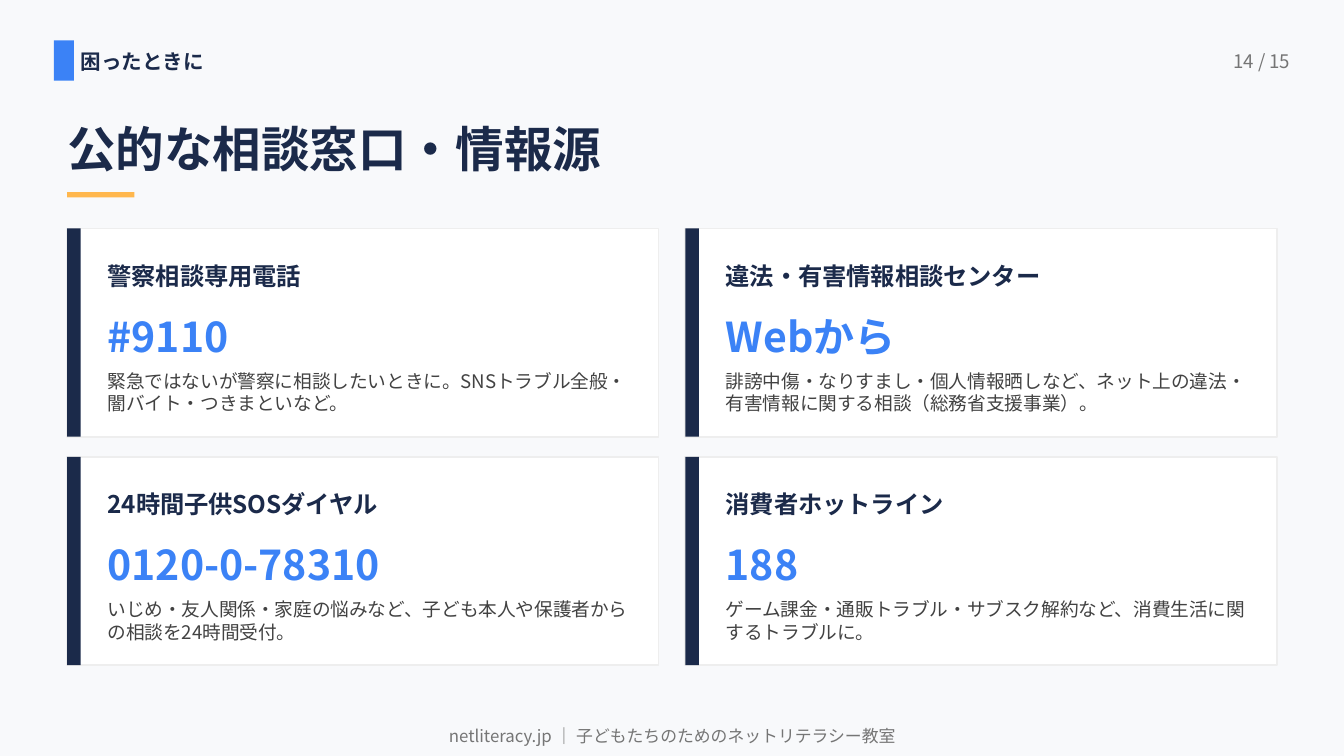
from lxml import etree
from pptx import Presentation
from pptx.dml.color import RGBColor
from pptx.enum.lang import MSO_LANGUAGE_ID
from pptx.enum.shapes import MSO_SHAPE
from pptx.enum.text import MSO_ANCHOR, PP_ALIGN
from pptx.oxml.ns import qn
from pptx.util import Inches, Pt

RECTANGLE = MSO_SHAPE.RECTANGLE
JAPANESE = MSO_LANGUAGE_ID.JAPANESE
TOP, MIDDLE = MSO_ANCHOR.TOP, MSO_ANCHOR.MIDDLE
LEFT, CENTER, RIGHT = PP_ALIGN.LEFT, PP_ALIGN.CENTER, PP_ALIGN.RIGHT

FONT = "Noto Sans CJK JP"
NAVY, BLUE, ORANGE = "1B2A4A", "3B82F6", "FFB74D"
GRAY, DARK_GRAY, BORDER = "757575", "424242", "EEEEEE"
WHITE, BACKGROUND = "FFFFFF", "F8F9FB"

SECTION = "困ったときに"
PAGE = "14 / 15"
TITLE = "公的な相談窓口・情報源"
FOOTER = "netliteracy.jp ｜ 子どもたちのためのネットリテラシー教室"
CONTACTS = [
    ("警察相談専用電話", "#9110",
     "緊急ではないが警察に相談したいときに。SNSトラブル全般・闇バイト・つきまといなど。"),
    ("違法・有害情報相談センター", "Webから",
     "誹謗中傷・なりすまし・個人情報晒しなど、ネット上の違法・有害情報に関する相談（総務省支援事業）。"),
    ("24時間子供SOSダイヤル", "0120-0-78310",
     "いじめ・友人関係・家庭の悩みなど、子ども本人や保護者からの相談を24時間受付。"),
    ("消費者ホットライン", "188",
     "ゲーム課金・通販トラブル・サブスク解約など、消費生活に関するトラブルに。"),
]

SLIDE_WIDTH = Inches(10)
SLIDE_HEIGHT = SLIDE_WIDTH * 9 // 16
COLUMNS = 2
GRID_LEFT, GRID_TOP = 0.5, 1.7
CARD_WIDTH, CARD_HEIGHT = 4.4, 1.55
COLUMN_GAP, ROW_GAP = 0.2, 0.15
TEXT_INSET, TEXT_WIDTH = 0.3, 3.95


def color(value):
    return RGBColor.from_string(value)


def add_rectangle(slide, left, top, width, height, fill, line=None):
    shape = slide.shapes.add_shape(
        RECTANGLE, Inches(left), Inches(top), Inches(width), Inches(height))
    shape.shadow.inherit = False
    shape.fill.solid()
    shape.fill.fore_color.rgb = color(fill)
    if line:
        shape.line.color.rgb = color(line)
        shape.line.width = Pt(1)
    else:
        shape.line.fill.background()


def add_text(slide, left, top, width, height, text, size, text_color,
             bold=False, align=LEFT, anchor=MIDDLE):
    box = slide.shapes.add_textbox(
        Inches(left), Inches(top), Inches(width), Inches(height))
    frame = box.text_frame
    frame.word_wrap = True
    frame.vertical_anchor = anchor
    frame.margin_left = frame.margin_right = 0
    frame.margin_top = frame.margin_bottom = 0
    paragraph = frame.paragraphs[0]
    paragraph.alignment = align
    run = paragraph.add_run()
    run.text = text
    run.font.size = Pt(size)
    run.font.bold = bold
    run.font.color.rgb = color(text_color)
    run.font.language_id = JAPANESE
    run.font.name = FONT
    etree.SubElement(run._r.get_or_add_rPr(), qn("a:ea")).set("typeface", FONT)


def add_card(slide, left, top, name, contact, description):
    add_rectangle(slide, left, top, CARD_WIDTH, CARD_HEIGHT, WHITE, BORDER)
    add_rectangle(slide, left, top, 0.1, CARD_HEIGHT, NAVY)
    text_left = left + TEXT_INSET
    add_text(slide, text_left, top + 0.15, TEXT_WIDTH, 0.4, name, 13, NAVY, bold=True)
    add_text(slide, text_left, top + 0.55, TEXT_WIDTH, 0.5, contact, 22, BLUE, bold=True)
    add_text(slide, text_left, top + 1.05, TEXT_WIDTH, 0.5, description, 10, DARK_GRAY,
             anchor=TOP)


def main():
    presentation = Presentation()
    presentation.slide_width = SLIDE_WIDTH
    presentation.slide_height = SLIDE_HEIGHT
    slide = presentation.slides.add_slide(presentation.slide_layouts[6])
    slide.background.fill.solid()
    slide.background.fill.fore_color.rgb = color(BACKGROUND)

    add_rectangle(slide, 0.4, 0.3, 0.15, 0.3, BLUE)
    add_text(slide, 0.6, 0.28, 6, 0.35, SECTION, 11, NAVY, bold=True)
    add_text(slide, 8.4, 0.28, 1.2, 0.35, PAGE, 10, GRAY, align=RIGHT)
    add_text(slide, 0.5, 0.75, 9, 0.7, TITLE, 26, NAVY, bold=True)
    add_rectangle(slide, 0.5, 1.43, 0.5, 0.04, ORANGE)

    for index, contact in enumerate(CONTACTS):
        row, column = divmod(index, COLUMNS)
        left = GRID_LEFT + column * (CARD_WIDTH + COLUMN_GAP)
        top = GRID_TOP + row * (CARD_HEIGHT + ROW_GAP)
        add_card(slide, left, top, *contact)

    add_text(slide, 0.4, 5.35, 9.2, 0.25, FOOTER, 9, GRAY, align=CENTER)
    presentation.save("out.pptx")


if __name__ == "__main__":
    main()
